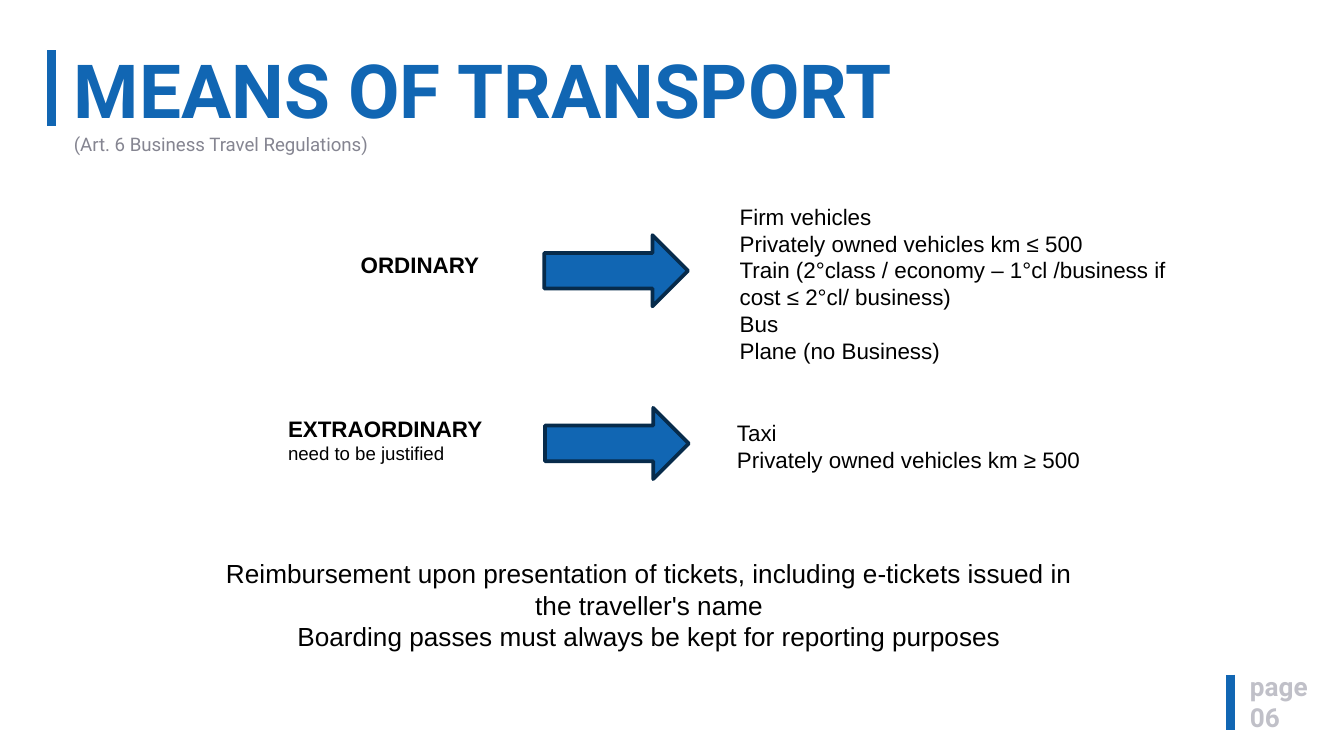
from lxml import etree
from pptx import Presentation
from pptx import util as u
from pptx.dml.color import RGBColor
from pptx.enum import shapes, text
from pptx.oxml import ns

SCALE = 4572
BLUE, NAVY, GREY, PALE, BLACK = "1166B3", "072B4B", "858591", "C0C0C8", "000000"


def px(length):
    """Turn px, 200 to the inch, into EMU."""
    return u.Emu(length * SCALE)


def paint(fill, colour):
    """Give a fill a solid hex colour."""
    fill.solid()
    fill.fore_color.rgb = RGBColor.from_string(colour)


def add_span(para, words, font="Arial", size=12, colour=BLACK, bold=False):
    """Add a formatted run of text to a paragraph."""
    span = para.add_run()
    span.text = words
    span.font.name, span.font.size, span.font.bold = font, u.Pt(size), bold
    paint(span.font.fill, colour)


def add_box(page, place, inset=(20, 10), anchor=text.MSO_ANCHOR.TOP):
    """Add an empty wrapping text box and return its frame."""
    frame = page.shapes.add_textbox(*map(px, place)).text_frame
    frame.word_wrap = True
    frame.vertical_anchor = anchor
    frame.margin_left = frame.margin_right = px(inset[0])
    frame.margin_top = frame.margin_bottom = px(inset[1])
    return frame


def add_lines(frame, lines, align=text.PP_ALIGN.LEFT, **style):
    """Write each line as a paragraph of the frame."""
    for index, line in enumerate(lines):
        para = frame.add_paragraph() if index else frame.paragraphs[0]
        para.alignment = align
        add_span(para, line, **style)


def add_bar(page, left, top, height):
    """Draw a thick vertical accent line."""
    bar = page.shapes.add_connector(
        shapes.MSO_CONNECTOR.STRAIGHT, *map(px, (left, top, left, top + height)))
    bar.line.width = u.Pt(5)
    paint(bar.line.fill, BLUE)
    etree.SubElement(bar.element.spPr, ns.qn("a:effectLst"))


def add_arrow(page, left, top):
    """Draw a block arrow pointing right."""
    arrow = page.shapes.add_shape(
        shapes.MSO_SHAPE.RIGHT_ARROW, *map(px, (left, top, 214, 106)))
    arrow.shadow.inherit = False
    paint(arrow.fill, BLUE)
    paint(arrow.line.fill, NAVY)
    arrow.line.width = u.Pt(2)


def add_heading(page, left, top, width, height):
    """Place the accent bar, the title and its subtitle."""
    add_bar(page, left, top, 112)
    frame = add_box(page, (left + 23, top, width - 23, height), (10, 4),
                    text.MSO_ANCHOR.MIDDLE)
    para = frame.paragraphs[0]
    para.line_spacing = 0.9
    add_span(para, "MEANS OF TRANSPORT", font="Roboto", size=40, colour=BLUE, bold=True)
    para.add_line_break()
    add_span(para, "(Art. 6 Business Travel Regulations)", font="Roboto", size=10,
             colour=GREY)


def add_page_mark(page, left, top, width, height):
    """Place the accent bar and the page number."""
    add_bar(page, left, top + 12, 82)
    frame = add_box(page, (left + 19, top, width - 19, height), (10, 4),
                    text.MSO_ANCHOR.MIDDLE)
    add_lines(frame, ["page", "06"], font="Roboto", size=14, colour=PALE, bold=True)


def add_category(page, arrow_place, label_place, list_place, label, means, note=None):
    """Place a label, its arrow and the list of means of transport."""
    frame = add_box(page, label_place)
    add_lines(frame, [label], bold=True)
    if note:
        add_span(frame.add_paragraph(), note, size=10)
    add_arrow(page, *arrow_place)
    add_lines(add_box(page, list_place), means)


def add_closing(page, *place):
    """Place the centred reimbursement rules."""
    add_lines(add_box(page, place), [
        "Reimbursement upon presentation of tickets, including e-tickets issued in "
        "the traveller's name",
        "Boarding passes must always be kept for reporting purposes",
    ], align=text.PP_ALIGN.CENTER, size=14)


def main():
    """Build the slide and save it."""
    deck = Presentation()
    deck.slide_width, deck.slide_height = px(2000), px(1125)
    page = deck.slides.add_slide(deck.slide_layouts[6])
    add_heading(page, 77, 75, 1631, 162)
    add_page_mark(page, 1831, 992, 209, 104)
    add_category(page, (810, 350), (517, 364, 324, 60), (1081, 292, 678, 262), "ORDINARY", [
        "Firm vehicles",
        "Privately owned vehicles km ≤ 500",
        "Train (2°class / economy – 1°cl /business if cost ≤ 2°cl/ business)",
        "Bus",
        "Plane (no Business)",
    ])
    add_category(page, (811, 607), (409, 608, 434, 94), (1077, 614, 614, 100),
                 "EXTRAORDINARY", ["Taxi", "Privately owned vehicles km ≥ 500"],
                 "need to be justified")
    add_closing(page, 298, 820, 1336, 162)
    deck.save("out.pptx")


if __name__ == "__main__":
    main()
